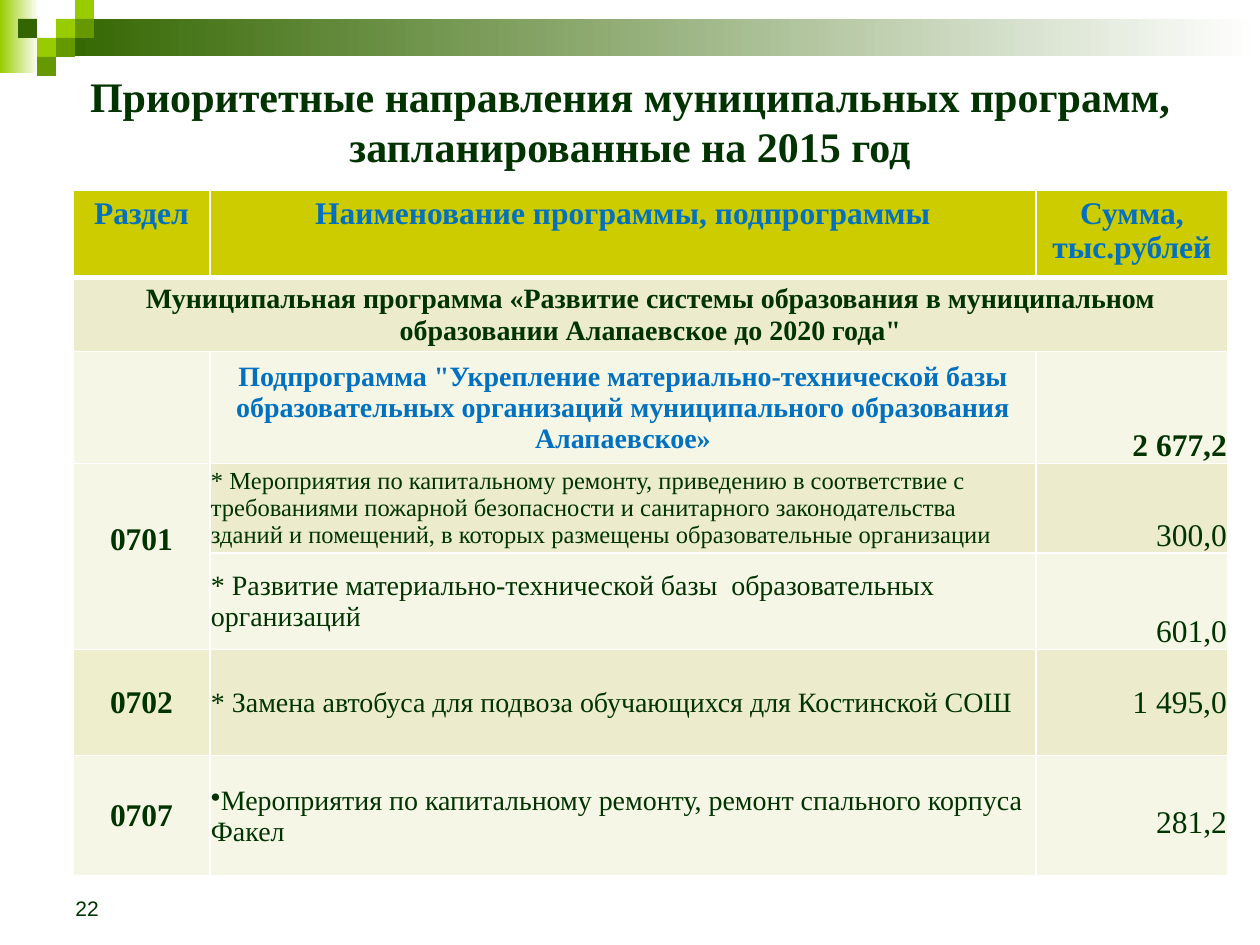
from lxml.etree import SubElement
from pptx import Presentation
from pptx.dml.color import RGBColor
from pptx.enum.shapes import MSO_SHAPE as Shape
from pptx.enum.text import MSO_ANCHOR as Anchor, PP_ALIGN as Align
from pptx.oxml.ns import qn
from pptx.util import Emu, Pt

SCALE = 914400 // 126
SERIF = "Times New Roman"
DARK, BLUE, WHITE = "003300", "0070C0", "FFFFFF"
FOREST, LEAF, LIME = "336600", "669900", "99CC00"
OLIVE, SAND, CREAM = "CCCC00", "ECECCC", "F6F6E7"

TITLE = "Приоритетные направления муниципальных программ, запланированные на 2015 год"
PAGE_NUMBER = "22"

GRADIENT_BARS = [(0, 0, 39, 73, LIME), (57, 19, 1203, 37, FOREST)]
SQUARE = 19
SQUARES = [
    (3, 1, LIME), (4, 0, LIME), (4, 1, LEAF), (2, 2, LIME),
    (1, 1, FOREST), (3, 2, LEAF), (2, 3, LEAF),
]

TABLE_LEFT, TABLE_TOP = 73, 190
COLUMN_WIDTHS = [137, 826, 192]
ROW_HEIGHTS = [84, 74, 112, 87, 97, 106, 120]
ROW_FILLS = [OLIVE, SAND, CREAM, SAND, CREAM, SAND, CREAM]
MERGES = [((1, 0), (1, 2)), ((3, 0), (4, 0))]
LINE = 35

HEADER = dict(size=18, color=BLUE, bold=True, align=Align.CENTER, anchor=Anchor.TOP, margins=(12, 6, 12, 6))
PROGRAM = dict(size=16, color=DARK, bold=True, align=Align.CENTER, anchor=Anchor.MIDDLE, margins=(1, 1, 1, 0))
SUBPROGRAM = dict(PROGRAM, color=BLUE)
SECTION = dict(PROGRAM, size=18)
ITEM = dict(PROGRAM, bold=False, align=Align.LEFT)
AMOUNT = dict(SECTION, bold=False, align=Align.RIGHT, anchor=Anchor.BOTTOM)
RAISED = dict(margins=(1, 1, 1, LINE))

CELLS = {
    (0, 0): ("Раздел", HEADER),
    (0, 1): ("Наименование программы, подпрограммы", HEADER),
    (0, 2): ("Сумма, тыс.рублей", HEADER),
    (1, 0): ("Муниципальная программа «Развитие системы образования в муниципальном "
             "образовании Алапаевское до 2020 года\"", PROGRAM),
    (2, 1): ("Подпрограмма \"Укрепление материально-технической базы образовательных "
             "организаций муниципального образования Алапаевское»", SUBPROGRAM),
    (2, 2): ("2 677,2", dict(AMOUNT, bold=True)),
    (3, 0): ("0701", SECTION | RAISED),
    (3, 1): ("* Мероприятия по капитальному ремонту, приведению в соответствие с требованиями "
             "пожарной безопасности и санитарного законодательства зданий и помещений, "
             "в которых размещены образовательные организации", dict(ITEM, size=14)),
    (3, 2): ("300,0", AMOUNT),
    (4, 1): ("* Развитие материально-технической базы  образовательных организаций", ITEM),
    (4, 2): ("601,0", AMOUNT),
    (5, 0): ("0702", SECTION),
    (5, 1): ("* Замена автобуса для подвоза обучающихся для Костинской СОШ", ITEM),
    (5, 2): ("1 495,0", AMOUNT | RAISED),
    (6, 0): ("0707", SECTION),
    (6, 1): ("Мероприятия по капитальному ремонту, ремонт спального корпуса Факел", ITEM),
    (6, 2): ("281,2", AMOUNT | RAISED),
}
CELL_FILLS = {(3, 0): CREAM, (5, 0): "EEEECC"}
BULLETED = (6, 1)


def px(value):
    return Emu(value * SCALE)


def rgb(color):
    return RGBColor.from_string(color)


def set_text(text_frame, text, size, color, bold, align, font=SERIF):
    text_frame.text = text
    paragraph = text_frame.paragraphs[0]
    paragraph.alignment = align
    for run in paragraph.runs:
        run.font.name = font
        run.font.size = Pt(size)
        run.font.bold = bold
        run.font.color.rgb = rgb(color)


def add_rectangle(slide, left, top, width, height):
    shape = slide.shapes.add_shape(Shape.RECTANGLE, px(left), px(top), px(width), px(height))
    shape.shadow.inherit = False
    shape.line.fill.background()
    return shape


def add_decoration(slide):
    for left, top, width, height, color in GRADIENT_BARS:
        fill = add_rectangle(slide, left, top, width, height).fill
        fill.gradient()
        fill.gradient_angle = 0
        for stop, stop_color in zip(fill.gradient_stops, (color, WHITE)):
            stop.color.rgb = rgb(stop_color)
    for column, row, color in SQUARES:
        fill = add_rectangle(slide, column * SQUARE - 1, row * SQUARE, SQUARE, SQUARE).fill
        fill.solid()
        fill.fore_color.rgb = rgb(color)


def add_text(slide, left, top, width, height, anchor, text, **style):
    text_frame = slide.shapes.add_textbox(px(left), px(top), px(width), px(height)).text_frame
    text_frame.word_wrap = True
    text_frame.vertical_anchor = anchor
    set_text(text_frame, text, **style)


def set_borders(cell, row):
    properties = cell._tc.get_or_add_tcPr()
    thick = {(0, "lnB"), (1, "lnT")}
    for side in ("lnL", "lnR", "lnT", "lnB"):
        width = Pt(3 if (row, side) in thick else 1)
        line = SubElement(properties, qn(f"a:{side}"), w=str(width))
        SubElement(SubElement(line, qn("a:solidFill")), qn("a:srgbClr"), val=WHITE)


def fill_cell(cell, text, size, color, bold, align, anchor, margins):
    cell.margin_left, cell.margin_top, cell.margin_right, cell.margin_bottom = map(px, margins)
    cell.vertical_anchor = anchor
    set_text(cell.text_frame, text, size, color, bold, align)


def add_program_table(slide):
    table = slide.shapes.add_table(
        len(ROW_HEIGHTS), len(COLUMN_WIDTHS), px(TABLE_LEFT), px(TABLE_TOP),
        px(sum(COLUMN_WIDTHS)), px(sum(ROW_HEIGHTS))).table
    for column, width in zip(table.columns, COLUMN_WIDTHS):
        column.width = px(width)
    for row, height in zip(table.rows, ROW_HEIGHTS):
        row.height = px(height)
    for row, row_fill in enumerate(ROW_FILLS):
        for column in range(len(COLUMN_WIDTHS)):
            cell = table.cell(row, column)
            set_borders(cell, row)
            cell.fill.solid()
            cell.fill.fore_color.rgb = rgb(CELL_FILLS.get((row, column), row_fill))
    for start, end in MERGES:
        table.cell(*start).merge(table.cell(*end))
    for position, (text, style) in CELLS.items():
        fill_cell(table.cell(*position), text, **style)
    bulleted = table.cell(*BULLETED).text_frame.paragraphs[0]
    SubElement(bulleted._p.get_or_add_pPr(), qn("a:buChar"), char="•")


def main():
    presentation = Presentation()
    presentation.slide_width, presentation.slide_height = px(1260), px(945)
    slide = presentation.slides.add_slide(presentation.slide_layouts[6])
    add_decoration(slide)
    add_text(slide, 63, 63, 1134, 116, Anchor.MIDDLE, TITLE,
             size=24, color=DARK, bold=True, align=Align.CENTER)
    add_program_table(slide)
    add_text(slide, 63, 861, 294, 66, Anchor.BOTTOM, PAGE_NUMBER,
             size=12, color=DARK, bold=False, align=Align.LEFT, font="Arial")
    presentation.save("out.pptx")


if __name__ == "__main__":
    main()
